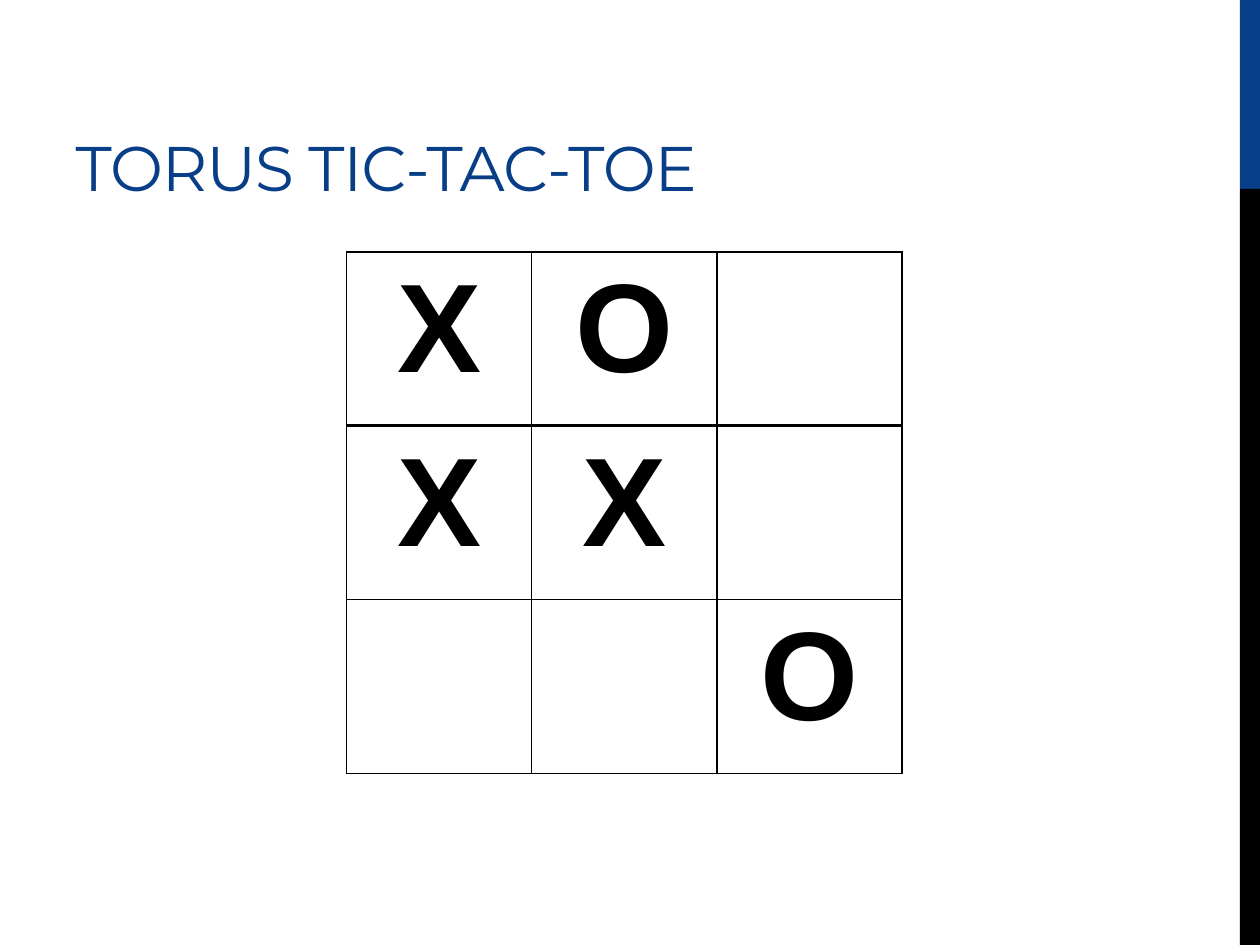
from lxml.etree import SubElement
from pptx import Presentation
from pptx.dml.color import RGBColor
from pptx.enum.shapes import MSO_SHAPE
from pptx.enum.text import MSO_ANCHOR, PP_ALIGN
from pptx.oxml.ns import qn
from pptx.util import Inches, Pt

BLUE, BLACK, WHITE = "073E87", "000000", "FFFFFF"


def paint(color, value):
    color.rgb = RGBColor.from_string(value)


def edge(cell, side, width):
    line = SubElement(cell._tc.get_or_add_tcPr(), qn(f"a:ln{side}"), w=str(Pt(width)))
    fill = SubElement(line, qn("a:solidFill"))
    SubElement(fill, qn("a:srgbClr"), val=BLACK)


deck = Presentation()
deck.slide_width, deck.slide_height = Inches(10), Inches(7.5)
wide, high = deck.slide_width, deck.slide_height
slide = deck.slides.add_slide(deck.slide_layouts[5])

# Side bar: one fifth blue, the rest black
bar = Inches(0.16)
for color, top, share in ((BLUE, 0, 0.2), (BLACK, 0.2, 0.8)):
    band = slide.shapes.add_shape(MSO_SHAPE.RECTANGLE, wide - bar, int(high * top),
                                  bar, int(high * share))
    band.shadow.inherit = False
    band.fill.solid()
    paint(band.fill.fore_color, color)
    band.line.fill.background()

# Title
title = slide.shapes.title
title.left, title.top = Inches(0.5), Inches(0.17)
title.width, title.height = Inches(6.33), Inches(1.5)
frame = title.text_frame
frame.word_wrap = True
frame.vertical_anchor = MSO_ANCHOR.BOTTOM
para = frame.paragraphs[0]
para.alignment = PP_ALIGN.LEFT
run = para.add_run()
run.text = "TORUS TIC-TAC-TOE"
run.font.name, run.font.size = "Montserrat", Pt(36)
paint(run.font.color, BLUE)
run._r.get_or_add_rPr().set("spc", "-60")

# Game board
board = ("XO ", "XX ", "  O")
size = len(board)
col, row = Inches(1.47), Inches(1.38)
table = slide.shapes.add_table(size, size, Inches(2.75), Inches(2),
                               size * col, size * row).table
table.first_row = table.horz_banding = False
for r, marks in enumerate(board):
    table.rows[r].height = row
    for c, mark in enumerate(marks):
        table.columns[c].width = col
        cell = table.cell(r, c)
        for side in "LRTB":
            heavy = (r, side) in ((0, "B"), (1, "T"))
            edge(cell, side, 2 if heavy else 1)
        cell.fill.solid()
        paint(cell.fill.fore_color, WHITE)
        if mark == " ":
            continue
        para = cell.text_frame.paragraphs[0]
        para.alignment = PP_ALIGN.CENTER
        run = para.add_run()
        run.text = mark
        run.font.name, run.font.size, run.font.bold = "Arial", Pt(72), True
        paint(run.font.color, BLACK)

deck.save("out.pptx")
